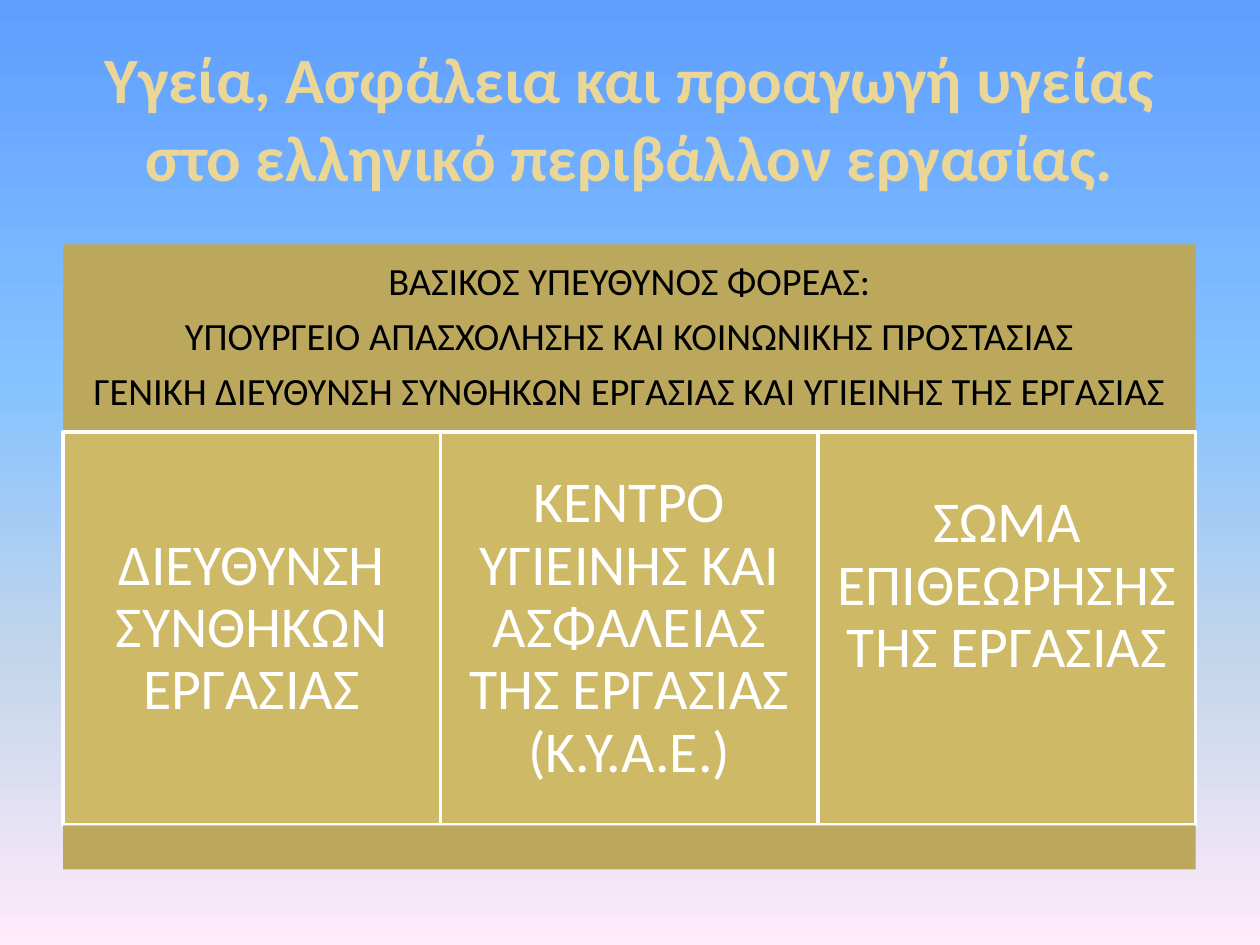
from copy import deepcopy
from dataclasses import dataclass

from pptx import Presentation
from pptx.dml.color import RGBColor
from pptx.enum.shapes import MSO_SHAPE
from pptx.enum.text import MSO_ANCHOR, MSO_AUTO_SIZE, PP_ALIGN
from pptx.oxml.ns import qn
from pptx.util import Inches, Pt


@dataclass(frozen=True)
class Theme:
    """Colours, type sizes and font of the slide."""
    font: str = "Calibri"
    band: str = "BBA85D"
    unit: str = "CEB966"
    light: str = "FFFFFF"
    dark: str = "000000"
    sky: tuple = ((0, "5E9EFF"), (40, "85C2FF"), (70, "C4D6EB"), (100, "FFEBFA"))
    gold: tuple = ((0, "EAD696"), (73, "EAD696"), (100, "E7D081"))
    title_size: float = 36.9
    band_size: float = 22
    unit_size: float = 33


THEME = Theme()
LEFT, WIDTH = 0.5, 8.99
HEADER_TOP, UNITS_TOP, FOOTER_TOP, FOOTER_BOTTOM = 1.94, 3.43, 6.55, 6.9
TITLE = "Υγεία, Ασφάλεια και προαγωγή υγείας στο ελληνικό περιβάλλον εργασίας."
AUTHORITY = (
    "ΒΑΣΙΚΟΣ ΥΠΕΥΘΥΝΟΣ ΦΟΡΕΑΣ:",
    "ΥΠΟΥΡΓΕΙΟ ΑΠΑΣΧΟΛΗΣΗΣ ΚΑΙ ΚΟΙΝΩΝΙΚΗΣ ΠΡΟΣΤΑΣΙΑΣ",
    "ΓΕΝΙΚΗ ΔΙΕΥΘΥΝΣΗ ΣΥΝΘΗΚΩΝ ΕΡΓΑΣΙΑΣ ΚΑΙ ΥΓΙΕΙΝΗΣ ΤΗΣ ΕΡΓΑΣΙΑΣ",
)
UNITS = (
    ("ΔΙΕΥΘΥΝΣΗ ΣΥΝΘΗΚΩΝ ΕΡΓΑΣΙΑΣ", 0.14),
    ("ΚΕΝΤΡΟ ΥΓΙΕΙΝΗΣ ΚΑΙ ΑΣΦΑΛΕΙΑΣ ΤΗΣ ΕΡΓΑΣΙΑΣ (Κ.Υ.Α.Ε.)", 0.14),
    ("ΣΩΜΑ ΕΠΙΘΕΩΡΗΣΗΣ ΤΗΣ ΕΡΓΑΣΙΑΣ", 0.81),
)


def apply_gradient(fill, owner, stops, angle):
    """Give a fill inside the owner element a linear gradient of any number of stops."""
    fill.gradient()
    fill.gradient_angle = 360 - angle
    stop_list = next(owner.iter(qn("a:gsLst")))
    pattern = deepcopy(stop_list[0])
    for old_stop in list(stop_list):
        stop_list.remove(old_stop)
    for _ in stops:
        stop_list.append(deepcopy(pattern))
    for stop, (percent, colour) in zip(fill.gradient_stops, stops):
        stop.position = percent / 100
        stop.color.rgb = RGBColor.from_string(colour)


def add_run(paragraph, text, size):
    """Add a centred run in the theme font and return its font."""
    paragraph.alignment = PP_ALIGN.CENTER
    run = paragraph.add_run()
    run.text = text
    run.font.name = THEME.font
    run.font.size = Pt(size)
    return run.font


def add_title(slide):
    """Place and format the title."""
    title = slide.shapes.title
    title.left, title.top = Inches(LEFT), Inches(0.3)
    title.width, title.height = Inches(9), Inches(1.25)
    frame = title.text_frame
    frame.word_wrap = True
    frame.auto_size = MSO_AUTO_SIZE.NONE
    frame.vertical_anchor = MSO_ANCHOR.MIDDLE
    font = add_run(frame.paragraphs[0], TITLE, THEME.title_size)
    font.bold = True
    apply_gradient(font.fill, title.element, THEME.gold, 80)


def add_block(slide, left, top, width, bottom, colour, outlined=False):
    """Add a flat rectangle, with a white outline if asked."""
    block = slide.shapes.add_shape(
        MSO_SHAPE.RECTANGLE, Inches(left), Inches(top), Inches(width), Inches(bottom - top))
    block.shadow.inherit = False
    block.fill.solid()
    block.fill.fore_color.rgb = RGBColor.from_string(colour)
    if outlined:
        block.line.color.rgb = RGBColor.from_string(THEME.light)
        block.line.width = Pt(2)
    else:
        block.line.fill.background()
    return block


def fill_text(block, lines, size, colour, inset, bottom_inset):
    """Write centred paragraphs into a block."""
    frame = block.text_frame
    frame.word_wrap = True
    frame.vertical_anchor = MSO_ANCHOR.MIDDLE
    frame.margin_left = frame.margin_right = frame.margin_top = Inches(inset)
    frame.margin_bottom = Inches(bottom_inset)
    for index, line in enumerate(lines):
        paragraph = frame.add_paragraph() if index else frame.paragraphs[0]
        paragraph.line_spacing = 0.9
        paragraph.space_after = Pt(0.35 * size)
        font = add_run(paragraph, line, size)
        font.color.rgb = RGBColor.from_string(colour)


def main():
    """Build and save the slide."""
    deck = Presentation()
    deck.slide_width, deck.slide_height = Inches(10), Inches(7.5)
    slide = deck.slides.add_slide(deck.slide_layouts[5])
    apply_gradient(slide.background.fill, slide.element, THEME.sky, 90)
    add_title(slide)

    header = add_block(slide, LEFT, HEADER_TOP, WIDTH, UNITS_TOP, THEME.band)
    fill_text(header, AUTHORITY, THEME.band_size, THEME.dark, 0.09, 0.09)

    unit_width = WIDTH / len(UNITS)
    for column, (name, bottom_inset) in enumerate(UNITS):
        unit = add_block(slide, LEFT + column * unit_width, UNITS_TOP, unit_width,
                         FOOTER_TOP, THEME.unit, outlined=True)
        fill_text(unit, [name], THEME.unit_size, THEME.light, 0.14, bottom_inset)

    add_block(slide, LEFT, FOOTER_TOP, WIDTH, FOOTER_BOTTOM, THEME.band)
    deck.save("out.pptx")


if __name__ == "__main__":
    main()
